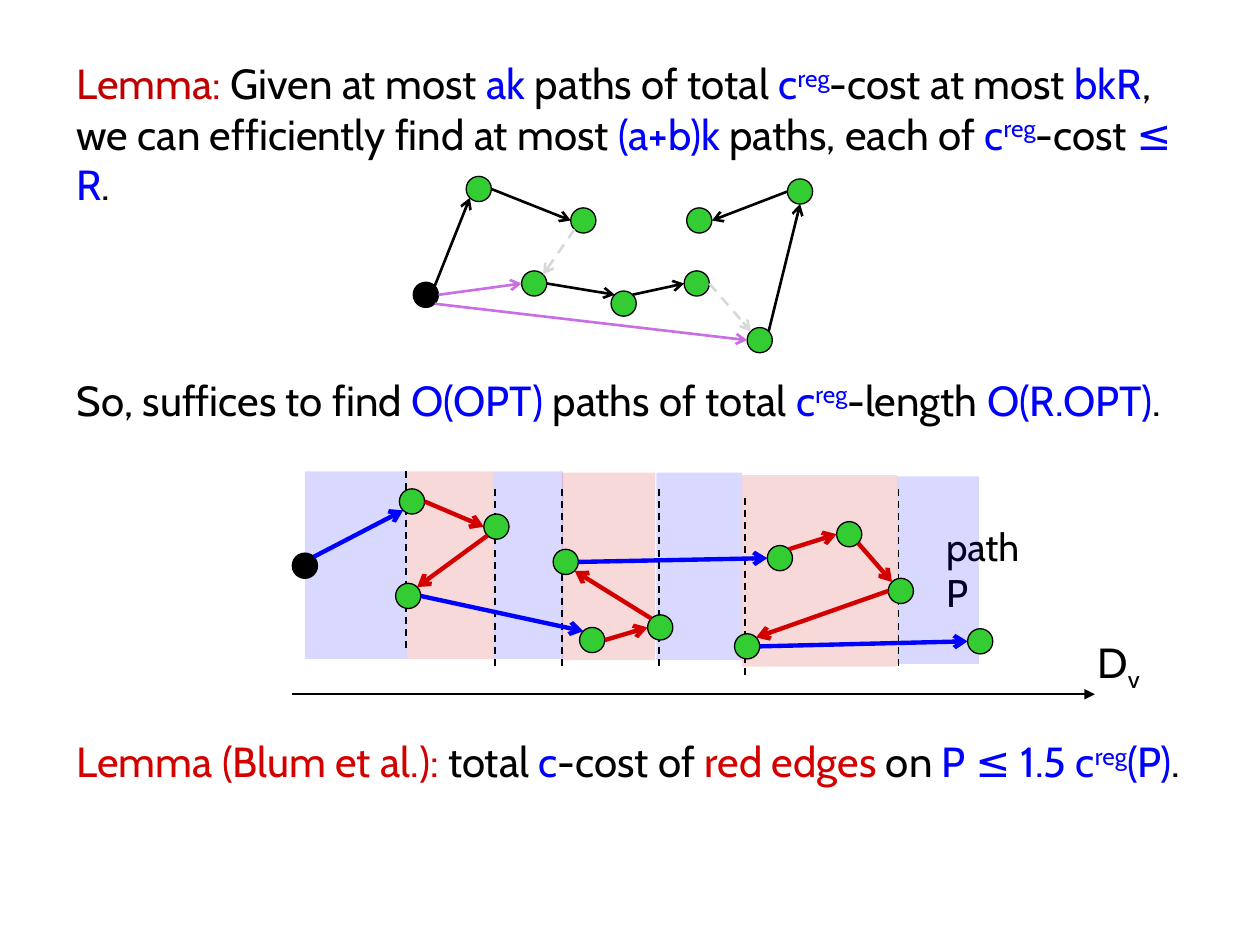
import math

import pptx
import pptx.dml.color
import pptx.enum.dml
import pptx.enum.shapes
import pptx.enum.text
import pptx.oxml
import pptx.oxml.ns
import pptx.util

SLIDE_WIDTH, SLIDE_HEIGHT = pptx.util.Inches(10), pptx.util.Inches(7.5)
COLUMN, ROW = SLIDE_WIDTH // 1000, SLIDE_HEIGHT // 750
NODE_SIZE = 20
FONT = "Cabin"
BLACK, BLUE, GREEN, GREY, PURPLE = "000000", "0000FF", "33CC33", "D9D9D9", "C96EE3"
DARK_RED, RED, BAND_RED = "C00000", "D30000", "CC0000"
TOP, TOP_LEFT, LEFT, BOTTOM_LEFT, BOTTOM, BOTTOM_RIGHT, RIGHT, TOP_RIGHT = range(8)
REG = ("reg", BLUE, 30)

LEMMA = [
    ("Lemma: ", DARK_RED), ("Given at most ", BLACK), ("ak", BLUE),
    (" paths of total ", BLACK), ("c", BLUE), REG, ("-cost at most ", BLACK),
    ("bkR", BLUE), (", we can efficiently find at most ", BLACK),
    ("(a+b)k ", BLUE), ("paths, each of ", BLACK), ("c", BLUE), REG,
    ("-cost ", BLACK), ("≤ R", BLUE), (".", BLACK),
]
CONSEQUENCE = [
    ("So, suffices to find ", BLACK), ("O(OPT)", BLUE), (" paths of total ", BLACK),
    ("c", BLUE), REG, ("-length ", BLACK), ("O(R.OPT)", BLUE), (".", BLACK),
]
RED_EDGE_LEMMA = [
    ("Lemma (Blum et al.):", RED), (" total ", BLACK), ("c", BLUE),
    ("-cost of ", BLACK), ("red edges", RED), (" on ", BLACK),
    ("P ≤ 1.5 c", BLUE), REG, ("(P)", BLUE), (".", BLACK),
]

SPLIT_NODES = {
    "root": (0, 84), "a": (42, 0), "b": (125, 25), "c": (86, 75), "d": (157, 91),
    "e": (215, 75), "f": (265, 120), "g": (297, 2), "h": (217, 25),
}
SPLIT_EDGES = [
    ("root", TOP_RIGHT, "a", BOTTOM_LEFT, BLACK),
    ("a", RIGHT, "b", LEFT, BLACK),
    ("b", BOTTOM_LEFT, "c", TOP_RIGHT, GREY),
    ("c", RIGHT, "d", TOP_LEFT, BLACK),
    ("d", TOP_RIGHT, "e", LEFT, BLACK),
    ("e", RIGHT, "f", TOP_LEFT, GREY),
    ("f", TOP_RIGHT, "g", BOTTOM, BLACK),
    ("g", LEFT, "h", RIGHT, BLACK),
    ("root", RIGHT, "c", LEFT, PURPLE),
    ("root", BOTTOM_RIGHT, "f", LEFT, PURPLE),
]

PATH_NODES = {
    "root": (0, 65), 1: (85, 14), 2: (152, 34), 3: (82, 89), 4: (228, 124),
    5: (282, 114), 6: (207, 62), 7: (377, 59), 8: (432, 40), 9: (473, 85),
    10: (351, 129), 11: (536, 125),
}
PATH_EDGES = [
    ("root", TOP_RIGHT, 1, BOTTOM_LEFT, BLUE),
    (1, RIGHT, 2, LEFT, RED),
    (2, BOTTOM_LEFT, 3, TOP_RIGHT, RED),
    (3, RIGHT, 4, TOP_LEFT, BLUE),
    (4, RIGHT, 5, LEFT, RED),
    (5, TOP_LEFT, 6, BOTTOM_RIGHT, RED),
    (6, RIGHT, 7, LEFT, BLUE),
    (7, TOP_RIGHT, 8, LEFT, RED),
    (8, BOTTOM_RIGHT, 9, TOP_LEFT, RED),
    (9, LEFT, 10, TOP_RIGHT, RED),
    (10, RIGHT, 11, LEFT, BLUE),
]
BANDS = [
    (10, 0, 81, 149), (91, 0, 69, 149), (160, 0, 55, 149), (214, 1, 74, 149),
    (289, 1, 68, 149), (357, 3, 123, 152), (480, 4, 65, 149),
]
DIVIDERS = [(90, 0), (161, 14), (214, 14), (291, 14), (359, 21), (481, 14)]
DIVIDER_HEIGHT = 143


def colour(value):
    """Turn a hex string into a colour."""
    return pptx.dml.color.RGBColor.from_string(value)


def place(box):
    """Turn a box in columns and rows into slide lengths."""
    left, top, width, height = box
    return left * COLUMN, top * ROW, width * COLUMN, height * ROW


def add_text(page, box, pieces, size=24):
    """Write one paragraph of (text, colour, baseline) pieces in the box."""
    frame = page.shapes.add_textbox(*place(box)).text_frame
    frame.word_wrap = True
    frame.auto_size = pptx.enum.text.MSO_AUTO_SIZE.SHAPE_TO_FIT_TEXT
    para = frame.paragraphs[0]
    for text, hue, *baseline in pieces:
        span = para.add_run()
        span.text = text
        span.font.name = FONT
        span.font.size = pptx.util.Pt(size)
        span.font.color.rgb = colour(hue)
        if baseline:
            span.font._element.set("baseline", str(baseline[0] * 1000))


def add_line(shapes, start, end, hue, width, dashed=False, arrow=None):
    """Draw a straight line between two grid points."""
    line = shapes.add_connector(
        pptx.enum.shapes.MSO_CONNECTOR.STRAIGHT,
        round(start[0] * COLUMN), round(start[1] * ROW),
        round(end[0] * COLUMN), round(end[1] * ROW),
    )
    line.line.color.rgb = colour(hue)
    line.line.width = pptx.util.Pt(width)
    if dashed:
        line.line.dash_style = pptx.enum.dml.MSO_LINE.DASH
    properties = line._element.spPr
    if arrow:
        tail = pptx.oxml.parse_xml(f'<a:tailEnd {pptx.oxml.ns.nsdecls("a")} type="{arrow}"/>')
        line.line._get_or_add_ln().append(tail)
    properties.append(pptx.oxml.parse_xml(f'<a:effectLst {pptx.oxml.ns.nsdecls("a")}/>'))


def add_filled(shapes, kind, box, hue):
    """Draw a preset shape with a plain fill and no shadow."""
    shape = shapes.add_shape(kind, *place(box))
    shape.shadow.inherit = False
    shape.fill.solid()
    shape.fill.fore_color.rgb = colour(hue)
    return shape


def add_graph(shapes, origin, nodes, edges, width):
    """Draw round nodes and the arrows that join their rims."""
    left, top = origin
    radius = NODE_SIZE / 2
    for name, (x, y) in nodes.items():
        hue = BLACK if name == "root" else GREEN
        box = (left + x, top + y, NODE_SIZE, NODE_SIZE)
        node = add_filled(shapes, pptx.enum.shapes.MSO_SHAPE.OVAL, box, hue)
        node.line.color.rgb = colour(BLACK)
        node.line.width = pptx.util.Pt(0.75)

    def rim(name, site):
        """Find a rim point, counted in eighths from the top."""
        x, y = nodes[name]
        angle = site * math.pi / 4
        return (left + x + radius * (1 - math.sin(angle)),
                top + y + radius * (1 - math.cos(angle)))

    for source, leave, target, enter, hue in edges:
        add_line(shapes, rim(source, leave), rim(target, enter), hue, width,
                 dashed=hue == GREY, arrow="arrow")


def add_banded_path(page, origin):
    """Draw the path over alternating bands with dashed dividers."""
    left, top = origin
    shapes = page.shapes.add_group_shape().shapes
    for index, (x, y, width, height) in enumerate(BANDS):
        box = (left + x, top + y, width, height)
        band = add_filled(shapes, pptx.enum.shapes.MSO_SHAPE.RECTANGLE, box,
                          BAND_RED if index % 2 else BLUE)
        band.line.fill.background()
        hue = band.fill._xPr.find(".//" + pptx.oxml.ns.qn("a:srgbClr"))
        hue.append(pptx.oxml.parse_xml(f'<a:alpha {pptx.oxml.ns.nsdecls("a")} val="15000"/>'))
    for x, y in DIVIDERS:
        add_line(shapes, (left + x, top + y), (left + x, top + y + DIVIDER_HEIGHT),
                 BLACK, 1, dashed=True)
    add_graph(shapes, origin, PATH_NODES, PATH_EDGES, 2.5)


def add_axis(page, box):
    """Draw the distance axis with its label at the right end."""
    left, top, width, height = box
    add_line(page.shapes, (left, top + height), (left + width, top + height),
             BLACK, 1, arrow="triangle")
    add_text(page, (left + width - 8, top, 69, 50), [("D", BLACK), ("v", BLACK, -25)])


def main():
    """Build the slide and save it."""
    deck = pptx.Presentation()
    deck.slide_width, deck.slide_height = SLIDE_WIDTH, SLIDE_HEIGHT
    page = deck.slides.add_slide(deck.slide_layouts[6])
    add_text(page, (51, 41, 921, 91), LEMMA)
    add_graph(page.shapes, (328, 140), SPLIT_NODES, SPLIT_EDGES, 1.5)
    add_text(page, (51, 292, 900, 50), CONSEQUENCE)
    add_text(page, (51, 579, 899, 50), RED_EDGE_LEMMA)
    add_axis(page, (232, 500, 637, 51))
    add_text(page, (741, 410, 101, 47), [("path P", BLACK)], size=22)
    add_banded_path(page, (232, 374))
    deck.save("out.pptx")


if __name__ == "__main__":
    main()
